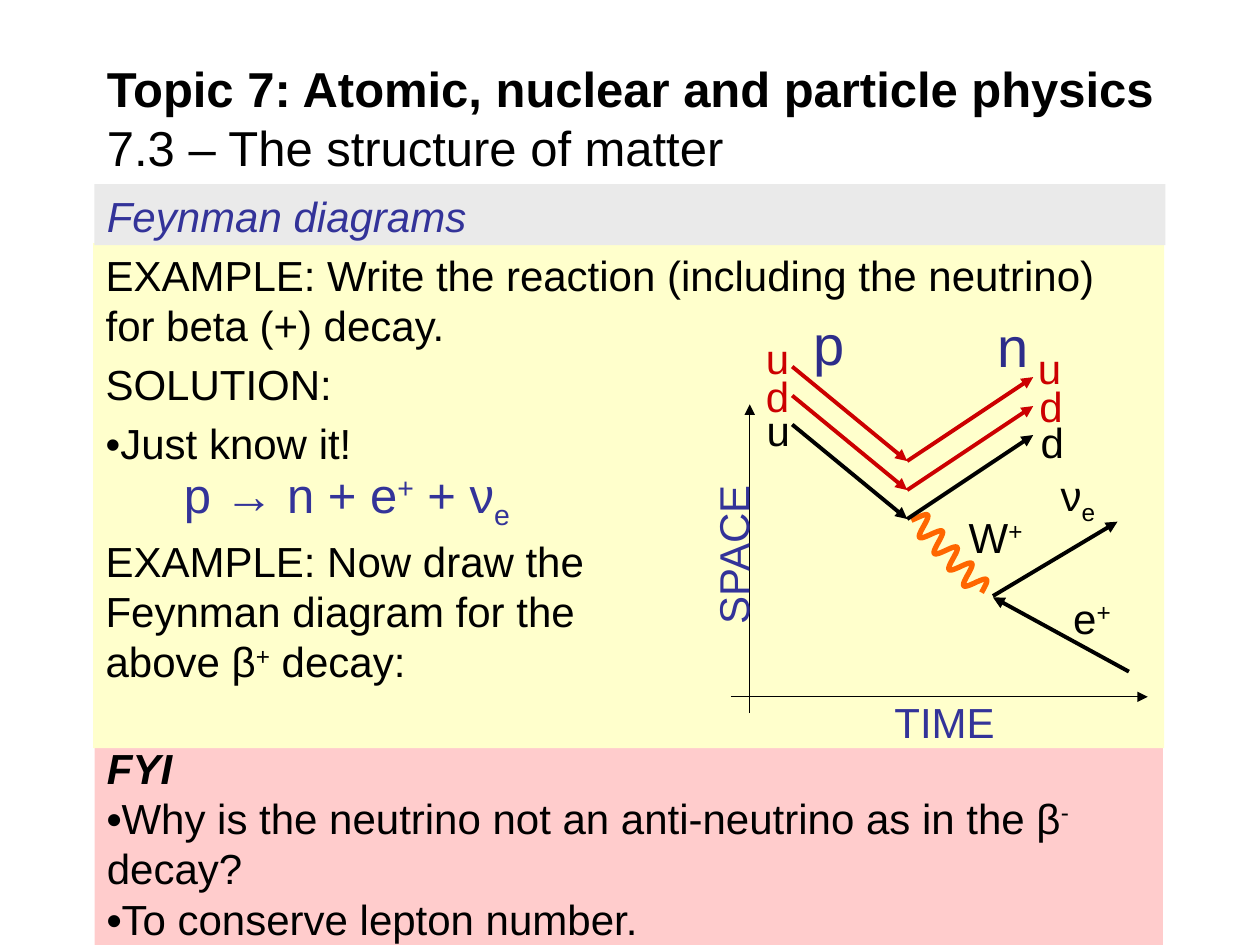
import math
from dataclasses import dataclass
from typing import Optional

import pptx
import pptx.dml.color
import pptx.enum.shapes
import pptx.enum.text
import pptx.oxml
import pptx.oxml.ns
import pptx.util

Pt = pptx.util.Pt


@dataclass(frozen=True)
class Theme:
    font: str = "Arial"
    black: str = "000000"
    red: str = "CC0000"
    blue: str = "333399"
    navy: str = "2D2D8A"
    orange: str = "FF6600"
    grey: str = "EAEAEA"
    yellow: str = "FFFFCC"
    pink: str = "FFCCCC"
    heading: float = 28
    body: float = 24
    hadron: float = 32
    line_height: float = 1.2
    paragraph_gap: float = 4.8
    thick: float = 2.25
    thin: float = 0.75


THEME = Theme()


@dataclass(frozen=True)
class Run:
    text: str
    bold: bool = False
    italic: bool = False
    baseline: int = 0


@dataclass(frozen=True)
class Paragraph:
    runs: tuple[Run, ...]
    before: float = 0


@dataclass(frozen=True)
class TextBlock:
    left: float
    top: float
    width: float
    height: float
    paragraphs: tuple[Paragraph, ...]
    size: float = THEME.body
    color: str = THEME.black
    fill: Optional[str] = None
    rotation: float = 0
    anchor: pptx.enum.text.MSO_ANCHOR = pptx.enum.text.MSO_ANCHOR.TOP


@dataclass(frozen=True)
class Line:
    start: tuple[float, float]
    end: tuple[float, float]
    color: str = THEME.black
    width: float = THEME.thick


def rgb(color: str) -> pptx.dml.color.RGBColor:
    return pptx.dml.color.RGBColor.from_string(color)


def para(*runs: Run, before: float = 0) -> Paragraph:
    return Paragraph(runs, before)


def sup(text: str) -> Run:
    return Run(text, baseline=30000)


def sub(text: str) -> Run:
    return Run(text, baseline=-25000)


def label(left: float, top: float, width: float, *runs: Run, **style) -> TextBlock:
    """One line of text in a box as high as that line."""
    height = style.get("size", THEME.body) * THEME.line_height + 7.2
    return TextBlock(left, top, width, height, (para(*runs),), **style)


def draw_text(slide, block: TextBlock) -> None:
    place = [Pt(v) for v in (block.left, block.top, block.width, block.height)]
    if block.fill:
        shape = slide.shapes.add_shape(pptx.enum.shapes.MSO_SHAPE.RECTANGLE, *place)
        shape.shadow.inherit = False
        shape.fill.solid()
        shape.fill.fore_color.rgb = rgb(block.fill)
        shape.line.fill.background()
    else:
        shape = slide.shapes.add_textbox(*place)
    shape.rotation = block.rotation
    frame = shape.text_frame
    frame.word_wrap = True
    frame.vertical_anchor = block.anchor
    for index, content in enumerate(block.paragraphs):
        paragraph = frame.add_paragraph() if index else frame.paragraphs[0]
        layout = {
            "alignment": pptx.enum.text.PP_ALIGN.LEFT,
            "line_spacing": Pt(block.size * THEME.line_height),
            "space_before": Pt(content.before),
        }
        for name, value in layout.items():
            setattr(paragraph, name, value)
        for part in content.runs:
            for number, piece in enumerate(part.text.split("\n")):
                if number:
                    paragraph.add_line_break()
                run = paragraph.add_run()
                run.text = piece
                formats = {"name": THEME.font, "size": Pt(block.size),
                           "bold": part.bold, "italic": part.italic}
                for name, value in formats.items():
                    setattr(run.font, name, value)
                run.font.color.rgb = rgb(block.color)
                if part.baseline:
                    run.font._element.set("baseline", str(part.baseline))


def draw_arrow(slide, line: Line) -> None:
    connector = slide.shapes.add_connector(
        pptx.enum.shapes.MSO_CONNECTOR.STRAIGHT,
        *(Pt(v) for v in line.start + line.end))
    connector.line.color.rgb = rgb(line.color)
    connector.line.width = Pt(line.width)
    outline = connector.line._get_or_add_ln()
    head = pptx.oxml.parse_xml(
        f'<a:tailEnd {pptx.oxml.ns.nsdecls("a")} type="triangle"/>')
    outline.append(head)
    outline.addnext(pptx.oxml.parse_xml(
        f'<a:effectLst {pptx.oxml.ns.nsdecls("a")}/>'))


def draw_boson(slide) -> None:
    """Sine wave along a slanted axis, from the quark vertex to the lepton vertex."""
    crest, period, swing = (559.4, 335.3), (-8.42, -9.22), (4.4, -4.1)
    first, last, steps = -0.28, 4.33, 110
    points = []
    for step in range(steps + 1):
        cycle = first + (last - first) * step / steps
        wave = math.cos(2 * math.pi * cycle)
        points.append(tuple(Pt(crest[i] + period[i] * cycle + swing[i] * wave)
                            for i in (0, 1)))
    builder = slide.shapes.build_freeform(*points[0])
    builder.add_line_segments(points[1:], close=False)
    boson = builder.convert_to_shape()
    boson.shadow.inherit = False
    boson.fill.background()
    boson.line.color.rgb = rgb(THEME.orange)
    boson.line.width = Pt(3)


GAP = THEME.paragraph_gap
PANELS = (
    TextBlock(54, 420.5, 610.5, 119.5, (
        para(Run("FYI", bold=True, italic=True)),
        para(Run("•", bold=True),
             Run("Why is the neutrino not an anti-neutrino as in the β"),
             sup("-"), Run(" decay?")),
        para(Run("•", bold=True), Run("To conserve lepton number.")),
    ), fill=THEME.pink),
    TextBlock(53.3, 139, 612, 288.5, (
        para(Run("EXAMPLE: Write the reaction (including the neutrino) "
                 "for beta (+) decay.")),
        para(Run("SOLUTION:"), before=GAP),
        para(Run("•Just know it!"), before=GAP),
        para(Run("EXAMPLE: Now draw the\nFeynman diagram for the\nabove β"),
             sup("+"), Run(" decay:"),
             before=2 * GAP + THEME.body * THEME.line_height),
    ), fill=THEME.yellow),
    TextBlock(54, 105.3, 612, 34.8, (para(Run("Feynman diagrams", italic=True)),),
              color=THEME.blue, fill=THEME.grey),
    TextBlock(54, 34.5, 644.5, 65.5, (
        para(Run("Topic 7: Atomic, nuclear and particle physics\n", bold=True),
             Run("7.3 – The structure of matter")),
    ), size=THEME.heading, anchor=pptx.enum.text.MSO_ANCHOR.MIDDLE),
    label(98, 266.5, 219, Run("p → n + e"), sup("+"), Run(" + ν"), sub("e"),
          size=THEME.heading, color=THEME.blue),
)

LABELS = (
    label(365, 292.3, 107.3, Run("SPACE"), color=THEME.blue, rotation=270),
    label(504, 394.6, 76.5, Run("TIME"), color=THEME.blue),
    label(431, 227.5, 34.5, Run("u")),
    label(587.5, 234.7, 34.5, Run("d")),
    label(606.2, 334.8, 59, Run("e"), sup("+")),
    label(599, 268.6, 59, Run("ν"), sub("e")),
    label(546.5, 288.7, 53.3, Run("W"), sup("+")),
    label(430.5, 208, 34.5, Run("d"), color=THEME.red),
    label(586.8, 213.8, 34.5, Run("d"), color=THEME.red),
    label(430.5, 186.5, 34.5, Run("u"), color=THEME.red),
    label(586, 192.2, 34.5, Run("u"), color=THEME.red),
    label(458, 173.5, 29.5, Run("p"), size=THEME.hadron, color=THEME.navy),
    label(563, 174.2, 29.5, Run("n"), size=THEME.hadron, color=THEME.navy),
)

AXES_AND_LEPTONS = (
    Line((428.4, 407.5), (428.4, 231.1), width=THEME.thin),
    Line((417.6, 398.2), (655.9, 398.2), width=THEME.thin),
    Line((567.4, 340.6), (638.6, 298.1)),
    Line((645.1, 383.8), (567.4, 341.3)),
)


def quark_lines() -> list[Line]:
    lines = []
    for row, color in enumerate((THEME.red, THEME.red, THEME.black)):
        top = 209.5 + 16.55 * row
        vertex = (518.4, top + 54)
        lines += [Line((452.7, top), vertex, color),
                  Line(vertex, (590.4, top + 6), color)]
    return lines


def main() -> None:
    deck = pptx.Presentation()
    deck.slide_width, deck.slide_height = Pt(720), Pt(540)
    slide = deck.slides.add_slide(deck.slide_layouts[6])
    for panel in PANELS:
        draw_text(slide, panel)
    draw_boson(slide)
    for line in (*AXES_AND_LEPTONS, *quark_lines()):
        draw_arrow(slide, line)
    for caption in LABELS:
        draw_text(slide, caption)
    deck.save("out.pptx")


if __name__ == "__main__":
    main()
